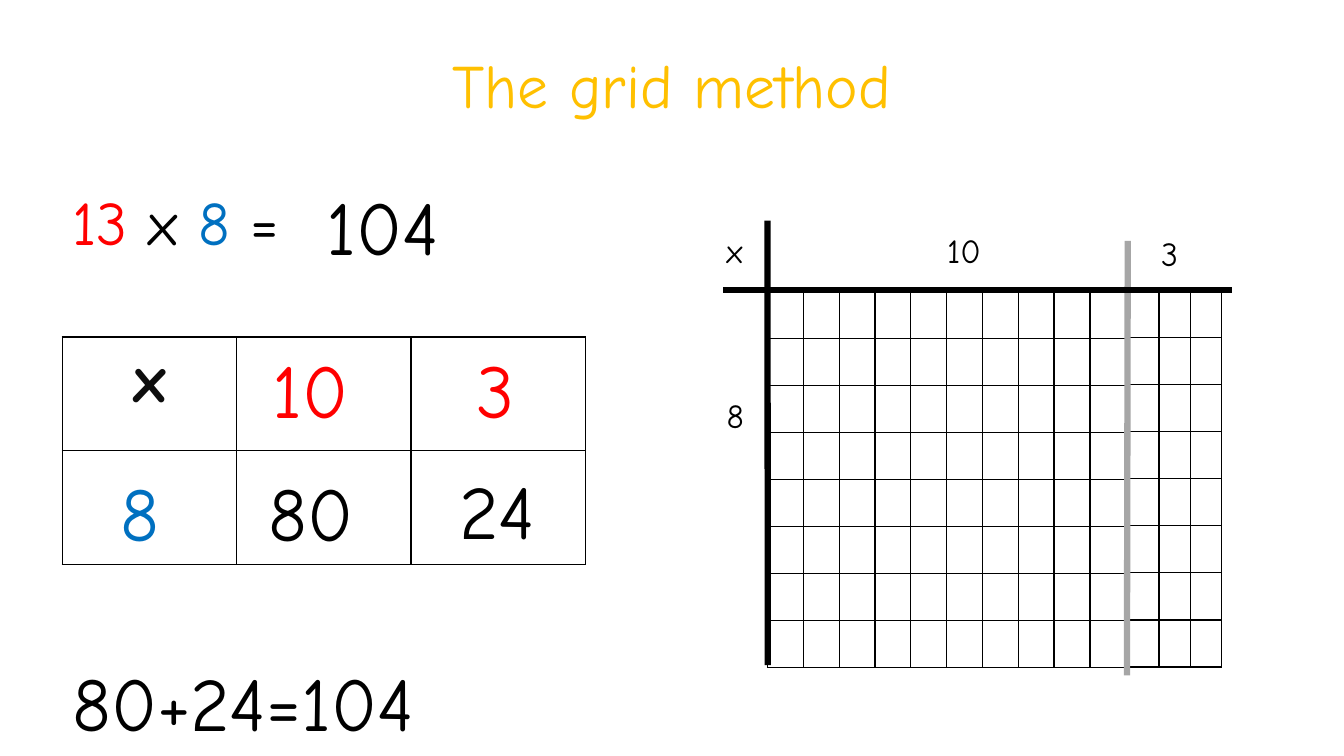
"""Build a slide that explains 13 x 8 with the grid method."""
from lxml import etree
from pptx import Presentation
from pptx.dml.color import RGBColor
from pptx.enum.shapes import MSO_CONNECTOR
from pptx.enum.text import MSO_ANCHOR, PP_ALIGN
from pptx.oxml.ns import qn
from pptx.util import Cm, Pt

STRAIGHT = MSO_CONNECTOR.STRAIGHT
MIDDLE = MSO_ANCHOR.MIDDLE
LEFT, CENTER = PP_ALIGN.LEFT, PP_ALIGN.CENTER
FONT = "Comic Neue"
BLACK = RGBColor(0x00, 0x00, 0x00)
NEAR_BLACK = RGBColor(0x0D, 0x0D, 0x0D)
WHITE = RGBColor(0xFF, 0xFF, 0xFF)
GOLD = RGBColor(0xFF, 0xC0, 0x00)
RED = RGBColor(0xFF, 0x00, 0x00)
BLUE = RGBColor(0x00, 0x70, 0xC0)
GRAY = RGBColor(0xA6, 0xA6, 0xA6)

prs = Presentation()
prs.slide_width, prs.slide_height = Cm(33.87), Cm(19.05)
slide = prs.slides.add_slide(prs.slide_layouts[6])


def write(frame, parts, size, align=LEFT):
    paragraph = frame.paragraphs[0]
    paragraph.alignment = align
    for text, color in parts:
        run = paragraph.add_run()
        run.text = text
        run.font.name = FONT
        run.font.size = Pt(size)
        run.font.color.rgb = color
    return paragraph


def add_grid(left, top, columns, rows, width, height):
    grid = slide.shapes.add_table(rows, columns, Cm(left), Cm(top),
                                  Cm(width), Cm(height)).table
    grid.first_row = grid.horz_banding = False
    for cell in grid.iter_cells():
        cell.fill.background()
        properties = cell._tc.get_or_add_tcPr()
        for position, side in enumerate(("a:lnL", "a:lnR", "a:lnT", "a:lnB")):
            border = etree.Element(qn(side), w=str(Pt(1)))
            fill = etree.SubElement(border, qn("a:solidFill"))
            etree.SubElement(fill, qn("a:srgbClr"), val=str(BLACK))
            properties.insert(position, border)
    return grid


title = slide.shapes.add_textbox(Cm(2.33), Cm(0.81), Cm(29.21), Cm(2.82)).text_frame
title.word_wrap = True
title.vertical_anchor = MIDDLE
write(title, [("The grid method", GOLD)], 44, CENTER).line_spacing = 0.9

partial_products = add_grid(1.57, 8.49, 3, 2, 13.18, 5.74)
for cell in partial_products.iter_cells():
    cell.fill.solid()
    cell.fill.fore_color.rgb = WHITE
times_sign = write(partial_products.cell(0, 0).text_frame, [("x", NEAR_BLACK)], 48, CENTER)
times_sign.runs[0].font.bold = True

question = slide.shapes.add_textbox(Cm(1.57), Cm(4.72), Cm(6.2), Cm(2.2)).text_frame
question.word_wrap = True
write(question, [("13 ", RED), ("x ", BLACK), ("8 ", BLUE), ("=", BLACK)], 44).line_spacing = 0.9

for text, color, left, top, width in [
    ("10", RED, 6.61, 8.51, 3.28), ("3", RED, 11.76, 8.51, 2.8),
    ("8", BLUE, 2.8, 11.61, 2.8), ("80+24=104", BLACK, 1.57, 16.41, 12),
    ("80", BLACK, 6.51, 11.61, 3.28), ("24", BLACK, 11.33, 11.56, 3.28),
    ("104", BLACK, 7.98, 4.4, 5.26),
]:
    number = slide.shapes.add_textbox(Cm(left), Cm(top), Cm(width), Cm(2.57)).text_frame
    number.word_wrap = True
    write(number, [(text, color)], 54)

add_grid(19.34, 7.35, 10, 8, 9.04, 9.48)
add_grid(28.42, 7.32, 3, 8, 2.37, 9.49)

for x1, y1, x2, y2, color in [
    (28.42, 6.07, 28.4, 17.02, GRAY),
    (31.04, 7.31, 18.21, 7.31, BLACK),
    (19.35, 16.76, 19.34, 5.56, BLACK),
]:
    divider = slide.shapes.add_connector(STRAIGHT, Cm(x1), Cm(y1), Cm(x2), Cm(y2))
    divider.line.color.rgb = color
    divider.line.width = Pt(4.5)
    etree.SubElement(divider._element.spPr, qn("a:effectLst"))

for text, left, top, width in [
    ("x", 18.06, 5.66, 1.02), ("10", 23.62, 5.66, 1.42),
    ("3", 29.01, 5.74, 1.04), ("8", 18.06, 9.83, 1.04),
]:
    label = slide.shapes.add_textbox(Cm(left), Cm(top), Cm(width), Cm(1.27)).text_frame
    label.word_wrap = False
    write(label, [(text, BLACK)], 24)

prs.save("out.pptx")
